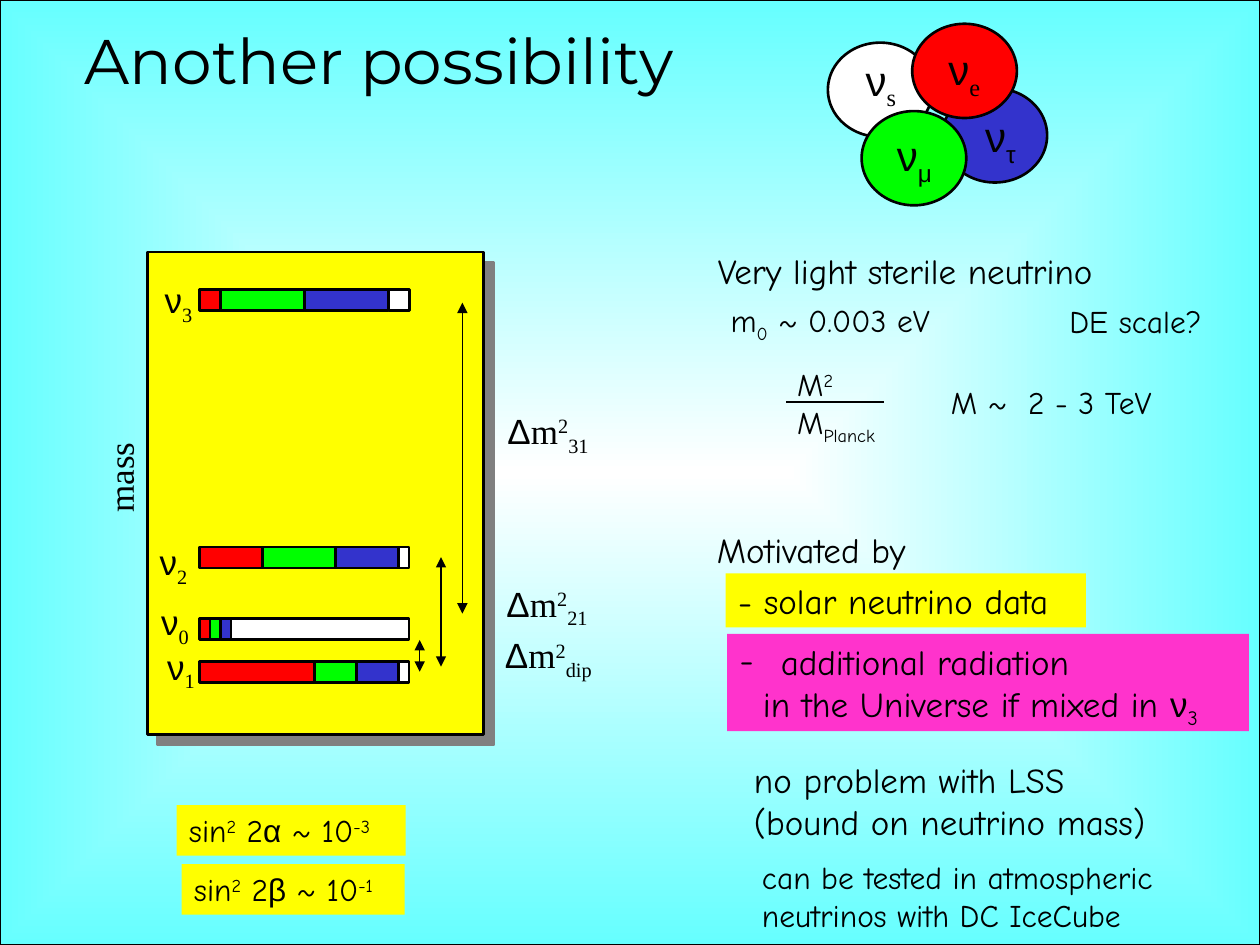
from dataclasses import dataclass

from lxml import etree
from pptx import Presentation
from pptx.dml.color import RGBColor
from pptx.enum.shapes import MSO_CONNECTOR, MSO_SHAPE
from pptx.enum.text import MSO_AUTO_SIZE, PP_ALIGN
from pptx.oxml import parse_xml
from pptx.oxml.ns import nsdecls, qn
from pptx.util import Cm, Pt

RECTANGLE = MSO_SHAPE.RECTANGLE
OVAL = MSO_SHAPE.OVAL
STRAIGHT = MSO_CONNECTOR.STRAIGHT
FIT_TEXT = MSO_AUTO_SIZE.SHAPE_TO_FIT_TEXT
LEFT = PP_ALIGN.LEFT
CENTER = PP_ALIGN.CENTER
SUB = -25
SUPER = 30


@dataclass(frozen=True)
class Theme:
    """Colours, fonts and type sizes of the slide."""

    black: str = "000000"
    white: str = "FFFFFF"
    aqua: str = "66FFFF"
    yellow: str = "FFFF00"
    pink: str = "FF33CC"
    gray: str = "808080"
    electron: str = "FF0000"
    muon: str = "00FF00"
    tau: str = "3333CC"
    title_font: str = "Montserrat"
    body_font: str = "Comic Neue"
    serif: str = "Times New Roman"
    greek: str = "Arial"
    title: int = 36
    flavour: int = 24
    body: int = 20
    small: int = 18


THEME = Theme()


def body(text, baseline=0):
    """Describe a run in the body font."""
    return text, THEME.body_font, baseline


def serif(text, baseline=0):
    """Describe a run in the serif font."""
    return text, THEME.serif, baseline


def greek(text, baseline=0):
    """Describe a run of Greek letters."""
    return text, THEME.greek, baseline


def add_figure(slide, kind, box, fill, width=1.5):
    """Add a filled, outlined preset shape."""
    shape = slide.shapes.add_shape(kind, *map(Cm, box))
    shape.shadow.inherit = False
    shape.fill.solid()
    shape.fill.fore_color.rgb = RGBColor.from_string(fill)
    shape.line.color.rgb = RGBColor.from_string(THEME.black)
    shape.line.width = Pt(width)
    return shape


def add_background(slide):
    """Cover the slide with a gradient from white centre to aqua edge."""
    shape = add_figure(slide, RECTANGLE, (0, 0, 25.4, 19.05), THEME.white, 0.75)
    properties = shape._element.spPr
    gradient = parse_xml(
        f'<a:gradFill {nsdecls("a")} rotWithShape="1"><a:gsLst>'
        f'<a:gs pos="0"><a:srgbClr val="{THEME.white}"/></a:gs>'
        f'<a:gs pos="100000"><a:srgbClr val="{THEME.aqua}"/></a:gs></a:gsLst>'
        '<a:path path="shape"><a:fillToRect l="50000" t="50000" r="50000" b="50000"/>'
        '</a:path></a:gradFill>')
    properties.replace(properties.find(qn("a:solidFill")), gradient)


def add_panel(slide):
    """Add the yellow mass panel with its hard grey shadow."""
    shape = add_figure(slide, RECTANGLE, (2.97, 5.08, 6.78, 9.73), THEME.yellow)
    effects = shape._element.spPr.find(qn("a:effectLst"))
    shadow = etree.SubElement(effects, qn("a:outerShdw"), dist=str(Pt(8.5)),
                              dir="2700000", algn="ctr", rotWithShape="0")
    etree.SubElement(shadow, qn("a:srgbClr"), val=THEME.gray)


def add_text(slide, box, paragraphs, size, fill=None, align=LEFT, rotation=0):
    """Add a text box made of paragraphs of described runs."""
    shape = slide.shapes.add_textbox(*map(Cm, box))
    shape.rotation = rotation
    if fill:
        shape.fill.solid()
        shape.fill.fore_color.rgb = RGBColor.from_string(fill)
    frame = shape.text_frame
    frame.word_wrap = False
    frame.auto_size = FIT_TEXT
    for index, runs in enumerate(paragraphs):
        paragraph = frame.add_paragraph() if index else frame.paragraphs[0]
        paragraph.alignment = align
        for text, font, baseline in runs:
            run = paragraph.add_run()
            run.text = text
            run.font.name = font
            run.font.size = Pt(size)
            run.font.color.rgb = RGBColor.from_string(THEME.black)
            if baseline:
                run._r.get_or_add_rPr().set("baseline", str(baseline * 1000))
    return shape


def indent(paragraph, margin, bullet=None):
    """Indent a paragraph, hanging a bullet if one is given."""
    properties = paragraph._p.get_or_add_pPr()
    properties.set("marL", str(Cm(margin)))
    if bullet:
        properties.set("indent", str(-Cm(margin)))
        etree.SubElement(properties, qn("a:buFont"), typeface=THEME.body_font)
        etree.SubElement(properties, qn("a:buChar"), char=bullet)


def add_line(slide, start, end, width=0.75, arrows=False):
    """Add a straight line, optionally with arrowheads at both ends."""
    line = slide.shapes.add_connector(STRAIGHT, *map(Cm, start + end))
    line.line.color.rgb = RGBColor.from_string(THEME.black)
    line.line.width = Pt(width)
    if arrows:
        for tag in ("a:headEnd", "a:tailEnd"):
            etree.SubElement(line.line._get_or_add_ln(), qn(tag), type="triangle")
    etree.SubElement(line._element.spPr, qn("a:effectLst"))


def add_flavours(slide):
    """Add the four overlapping flavour circles and their labels."""
    flavours = [
        (16.69, 0.86, THEME.white, 17.2, 0.97, 1.17, serif("s", SUB)),
        (19, 1.78, THEME.tau, 19.61, 2.11, 1.2, greek("τ", SUB)),
        (17.37, 2.24, THEME.muon, 17.83, 2.49, 1.4, greek("μ", SUB)),
        (18.39, 0.48, THEME.electron, 18.87, 0.76, 1.2, serif("e", SUB)),
    ]
    for left, top, color, *_ in flavours:
        add_figure(slide, OVAL, (left, top, 2.11, 1.9), color)
    for *_, left, top, width, index in flavours:
        add_text(slide, (left, top, width, 1.27), [[greek("ν"), index]], THEME.flavour)


def add_mass_states(slide):
    """Add each mass state as a labelled bar of flavour shares."""
    colors = (THEME.electron, THEME.muon, THEME.tau, THEME.white)
    states = [
        ("3", 5.84, (3.07, 5.49), (2, 8, 8, 2)),
        ("2", 11.03, (2.97, 10.77), (6, 7, 6, 1)),
        ("0", 12.47, (3, 11.99), (1, 1, 1, 17)),
        ("1", 13.34, (3.12, 12.88), (11, 4, 4, 1)),
    ]
    for name, top, label, shares in states:
        left = 4.02
        for share, color in zip(shares, colors):
            width = 4.23 * share / sum(shares)
            add_figure(slide, RECTANGLE, (left, top, width, 0.42), color)
            left += width
        add_text(slide, (*label, 1.12, 1.09),
                 [[greek("ν"), serif(name, SUB)]], THEME.body)


def add_splittings(slide):
    """Add the mass splitting arrows and their labels."""
    for x, top, bottom in ((9.32, 6.1, 12.37), (8.89, 11.23, 13.44), (8.46, 12.9, 13.54)):
        add_line(slide, (x, top), (x, bottom), arrows=True)
    for left, top, width, name in ((9.98, 8.13, 2.18, "31"), (9.96, 11.61, 2.18, "21"),
                                   (9.93, 12.65, 2.31, "dip")):
        runs = [greek("Δ"), serif("m"), serif("2", SUPER), serif(name, SUB)]
        add_text(slide, (left, top, width, 1.09), [runs], THEME.body)


def add_notes_column(slide):
    """Add the statements in the right column."""
    size, small = THEME.body, THEME.small
    add_text(slide, (14.22, 4.9, 9.12, 1.09), [[body("Very light sterile neutrino")]], size)
    add_text(slide, (14.48, 5.94, 4.7, 1.02),
             [[body("m"), body("0", SUB), body(" ~ 0.003 eV")]], small)
    add_text(slide, (21.31, 5.97, 3.38, 1.02), [[body("DE scale?")]], small)
    add_text(slide, (15.82, 7.24, 2.29, 1.78),
             [[body("M"), body("2", SUPER)], [body("M"), body("Planck", SUB)]], small)
    add_line(slide, (15.85, 8.1), (17.83, 8.1), 1)
    add_text(slide, (18.92, 7.59, 4.83, 1.02), [[body("M ~  2 - 3 TeV")]], small)
    add_text(slide, (14.2, 10.52, 4.88, 1.09), [[body("Motivated by")]], size)
    add_text(slide, (14.63, 11.56, 7.26, 1.09),
             [[body("- solar neutrino data")]], size, THEME.yellow)
    radiation = add_text(slide, (14.66, 12.78, 10.52, 1.96), [
        [body("additional radiation")],
        [body("in the Universe if mixed in "), greek("ν"), body("3", SUB)],
    ], size, THEME.pink)
    first, second = radiation.text_frame.paragraphs
    indent(first, 0.83, "-")
    indent(second, 0.47)
    structure = add_text(slide, (14.48, 15.16, 9.09, 1.96), [
        [body("no problem with LSS")], [body("(bound on neutrino mass)")]], size)
    for paragraph in structure.text_frame.paragraphs:
        indent(paragraph, 0.47)
    add_text(slide, (15.11, 17.17, 9.27, 1.78), [
        [body("can be tested in atmospheric")], [body("neutrinos with DC IceCube")]], small)


def add_mixing(slide):
    """Add the two mixing angle estimates."""
    for left, top, width, angle, power in ((3.56, 16.23, 4.62, "α", "-3"),
                                           (3.66, 17.42, 4.5, "β", "-1")):
        runs = [body("sin"), body("2", SUPER), body(" 2"), greek(angle),
                body(" ~ 10"), body(power, SUPER)]
        add_text(slide, (left, top, width, 1.02), [runs], THEME.small, THEME.yellow)


def main():
    """Build the slide and save it."""
    presentation = Presentation()
    presentation.slide_width, presentation.slide_height = Cm(25.4), Cm(19.05)
    slide = presentation.slides.add_slide(presentation.slide_layouts[6])
    add_background(slide)
    add_text(slide, (0.81, 0.3, 13.67, 2.97),
             [[("Another possibility", THEME.title_font, 0)]], THEME.title, align=CENTER)
    add_flavours(slide)
    add_panel(slide)
    add_mass_states(slide)
    add_splittings(slide)
    add_text(slide, (1.45, 9.07, 1.93, 1.09), [[serif("mass")]], THEME.body, rotation=270)
    add_mixing(slide)
    add_notes_column(slide)
    presentation.save("out.pptx")


if __name__ == "__main__":
    main()
